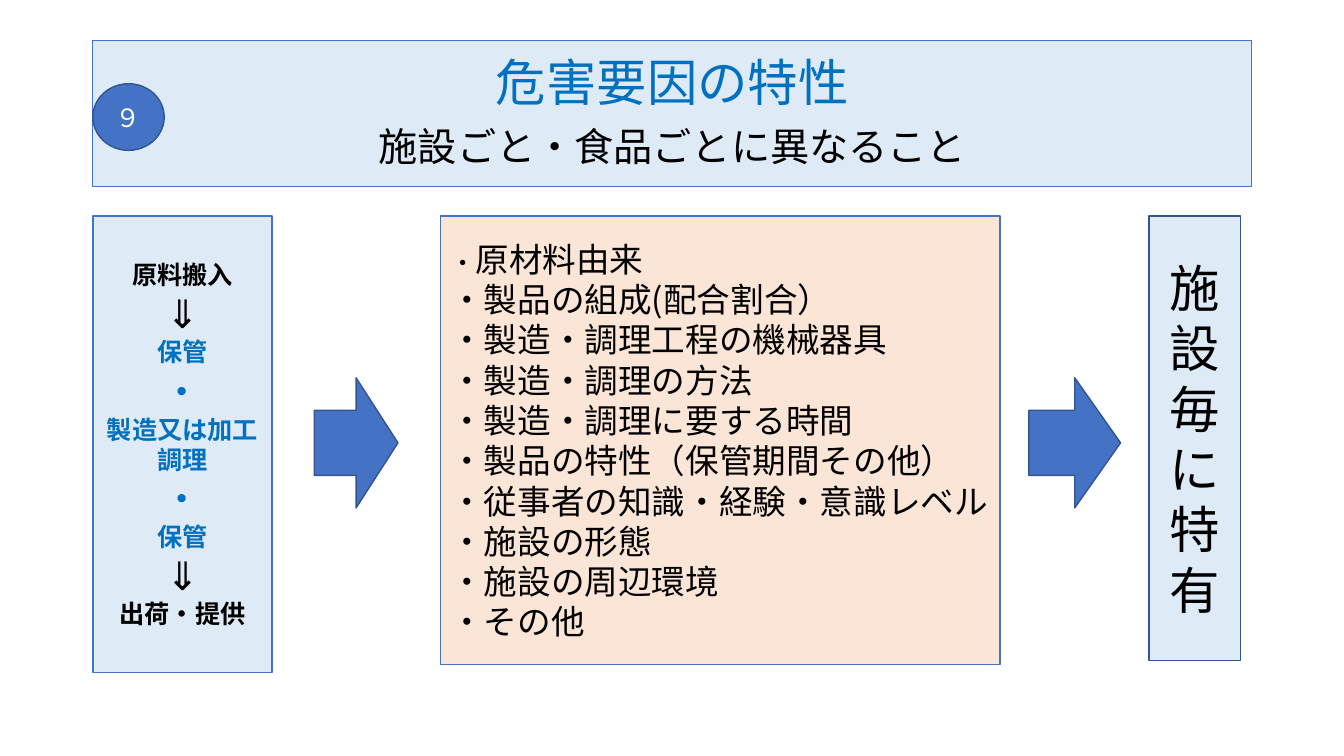
import dataclasses

import pptx
import pptx.dml.color
import pptx.enum.shapes
import pptx.enum.text
import pptx.oxml
import pptx.oxml.ns
import pptx.util

Cm = pptx.util.Cm
Pt = pptx.util.Pt
Shapes = pptx.enum.shapes.MSO_SHAPE
Align = pptx.enum.text.PP_ALIGN


@dataclasses.dataclass(frozen=True)
class Theme:
    font: str = "Noto Sans CJK JP"
    pale_blue: str = "DEEBF7"
    peach: str = "FBE5D6"
    blue: str = "4472C4"
    dark_blue: str = "325491"
    accent: str = "0070C0"
    black: str = "000000"
    white: str = "FFFFFF"
    heading: float = 36
    subtitle: float = 28
    body: float = 24
    small: float = 18
    line_height: float = 1.2
    title_line_height: float = 1.08


def rgb(value):
    return pptx.dml.color.RGBColor.from_string(value)


def add_run(paragraph, text, *, font, size, color, bold=False):
    run = paragraph.add_run()
    run.text = text
    run.font.name = font
    run.font.size = Pt(size)
    run.font.bold = bold
    run.font.color.rgb = rgb(color)
    east_asian = pptx.oxml.parse_xml(
        f'<a:ea {pptx.oxml.ns.nsdecls("a")} typeface="{font}"/>'
    )
    run.font._element.find(pptx.oxml.ns.qn("a:latin")).addnext(east_asian)


class SlideBuilder:
    def __init__(self, slide, theme):
        self.slide = slide
        self.theme = theme

    def shape(self, kind, left, top, width, height, fill, line, line_width=1):
        shape = self.slide.shapes.add_shape(
            kind, Cm(left), Cm(top), Cm(width), Cm(height)
        )
        shape.shadow.inherit = False
        shape.fill.solid()
        shape.fill.fore_color.rgb = rgb(fill)
        shape.line.color.rgb = rgb(line)
        shape.line.width = Pt(line_width)
        return shape

    def text(self, shape, lines, align=Align.CENTER, line_height=None, gap=0):
        frame = shape.text_frame
        frame.word_wrap = True
        frame.vertical_anchor = pptx.enum.text.MSO_ANCHOR.MIDDLE
        for index, runs in enumerate(lines):
            paragraph = frame.add_paragraph() if index else frame.paragraphs[0]
            paragraph.alignment = align
            paragraph.space_before = Pt(gap if index else 0)
            largest = max(size for _, size, _, _ in runs)
            paragraph.line_spacing = Pt(
                round(largest * (line_height or self.theme.line_height), 1)
            )
            for text, size, color, bold in runs:
                add_run(paragraph, text, font=self.theme.font,
                        size=size, color=color, bold=bold)

    def panel(self, left, top, width, height, fill, line, lines,
              line_width=1, **text_format):
        panel = self.shape(Shapes.RECTANGLE, left, top, width, height,
                           fill, line, line_width)
        self.text(panel, lines, **text_format)

    def arrow(self, left, width):
        self.shape(Shapes.RIGHT_ARROW, left, 9.52, width, 3.28,
                   self.theme.blue, self.theme.dark_blue)

    def badge(self, left, top, width, height, label):
        badge = self.shape(Shapes.OVAL, left, top, width, height,
                           self.theme.blue, self.theme.dark_blue)
        self.text(badge, [[(label, self.theme.small, self.theme.white, False)]])


def main():
    theme = Theme()
    presentation = pptx.Presentation()
    presentation.slide_width = Cm(33.87)
    presentation.slide_height = Cm(19.05)
    slide = presentation.slides.add_slide(presentation.slide_layouts[6])
    builder = SlideBuilder(slide, theme)
    left_edge, panel_top = 2.34, 5.44

    builder.panel(
        left_edge, 1.02, 29.21, 3.68, theme.pale_blue, theme.blue,
        [[("危害要因の特性", theme.heading, theme.accent, False)],
         [("施設ごと・食品ごとに異なること", theme.subtitle, theme.black, False)]],
        line_width=0.75, line_height=theme.title_line_height, gap=11,
    )

    process_steps = [
        ("原料搬入", theme.black), ("⇓", theme.black),
        ("保管", theme.accent), ("・", theme.accent),
        ("製造又は加工", theme.accent), ("調理", theme.accent),
        ("・", theme.accent), ("保管", theme.accent),
        ("⇓", theme.black), ("出荷・提供", theme.black),
    ]
    process_lines = []
    for step, color in process_steps:
        is_mark = step in ("⇓", "・")
        size = theme.subtitle if is_mark else theme.small
        process_lines.append([(step, size, color, not is_mark)])
    builder.panel(left_edge, panel_top, 4.52, 11.51,
                  theme.pale_blue, theme.blue, process_lines)

    factors = [
        "原材料由来", "製品の組成(配合割合）", "製造・調理工程の機械器具",
        "製造・調理の方法", "製造・調理に要する時間",
        "製品の特性（保管期間その他）", "従事者の知識・経験・意識レベル",
        "施設の形態", "施設の周辺環境", "その他",
    ]
    factor_lines = [[("・", theme.small, theme.black, False),
                     (factors[0], theme.body, theme.black, False)]]
    factor_lines += [[("・" + factor, theme.body, theme.black, False)]
                     for factor in factors[1:]]
    builder.panel(11.1, panel_top, 14.1, 11.3, theme.peach, theme.blue,
                  factor_lines, align=Align.LEFT)

    builder.panel(28.96, panel_top, 2.31, 11.2, theme.pale_blue, theme.dark_blue,
                  [[(text, theme.heading, theme.black, False)]
                   for text in ("施設毎に", "特有")])

    builder.arrow(7.92, 2.11)
    builder.arrow(25.93, 2.31)
    builder.badge(left_edge, 2.11, 1.8, 1.68, "９")

    presentation.save("out.pptx")


if __name__ == "__main__":
    main()
